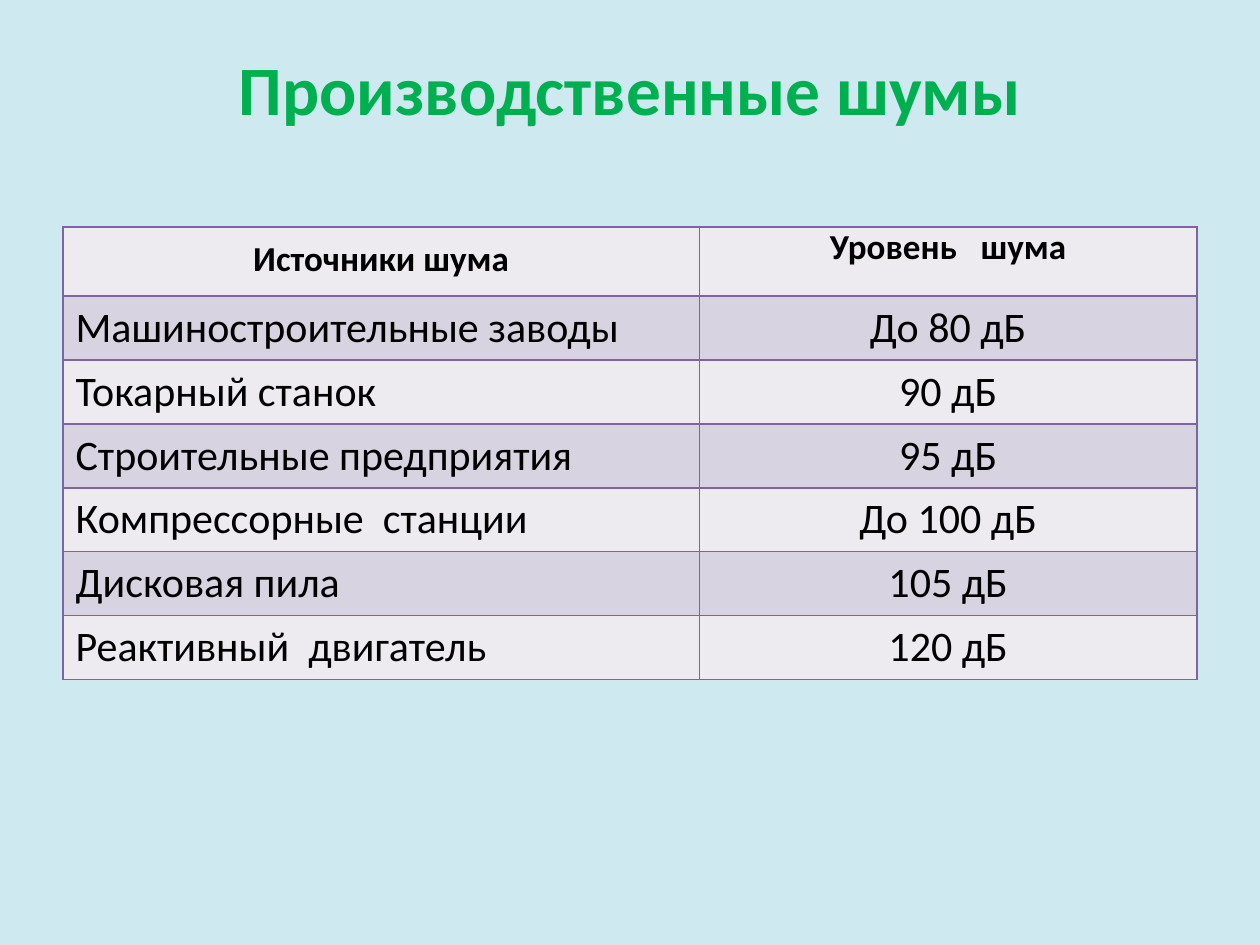
from lxml import etree
from pptx import Presentation
from pptx.dml.color import RGBColor
from pptx.enum import text
from pptx.oxml.ns import qn
from pptx.util import Inches, Pt

# Content
TITLE = "Производственные шумы"
HEADER = ("Источники шума", "Уровень   шума")
NOISE = [
    ("Машиностроительные заводы", "До 80 дБ"),
    ("Токарный станок", "90 дБ"),
    ("Строительные предприятия", "95 дБ"),
    ("Компрессорные  станции", "До 100 дБ"),
    ("Дисковая пила", "105 дБ"),
    ("Реактивный  двигатель", "120 дБ"),
]

THEME = {
    "font": "Calibri",
    "background": "CEE9EF",
    "title": "00B050",
    "text": "000000",
    "border": "8064A2",
    "bands": ("EDEAF0", "D8D3E0"),
    "title_size": 39.6,
    "header_size": 20,
    "body_size": 24,
}
COL_WIDTHS = (5.05, 3.95)
HEADER_HEIGHT, ROW_HEIGHT = 0.55, 0.5
HEADER_SPACING = (1.15, 0.8)
HEADER_INSET = 0.04


def style(p, size, color, bold, align):
    p.alignment = align
    p.font.name = THEME["font"]
    p.font.size = Pt(size)
    p.font.bold = bold
    p.font.color.rgb = RGBColor.from_string(color)


def add_borders(cell):
    """Put a 1 pt line on each side; lines must come before the fill."""
    tc_pr = cell._tc.get_or_add_tcPr()
    for i, side in enumerate(("lnL", "lnR", "lnT", "lnB")):
        ln = etree.Element(qn(f"a:{side}"), w=str(Pt(1)))
        fill = etree.SubElement(ln, qn("a:solidFill"))
        etree.SubElement(fill, qn("a:srgbClr"), val=THEME["border"])
        tc_pr.insert(i, ln)


def fill_cell(cell, value, row, col):
    is_header = row == 0
    cell.text = value
    cell.fill.solid()
    cell.fill.fore_color.rgb = RGBColor.from_string(THEME["bands"][row % 2])
    add_borders(cell)
    p = cell.text_frame.paragraphs[0]
    centred = is_header or col == 1
    style(p, THEME["header_size" if is_header else "body_size"], THEME["text"], is_header,
          text.PP_ALIGN.CENTER if centred else text.PP_ALIGN.LEFT)
    if is_header:
        p.line_spacing = HEADER_SPACING[col]
        p.space_after = Pt(10)
        cell.margin_left = cell.margin_right = Inches(HEADER_INSET)
        cell.margin_top = cell.margin_bottom = Inches(HEADER_INSET)


def main():
    prs = Presentation()
    prs.slide_width, prs.slide_height = Inches(10), Inches(7.5)
    slide = prs.slides.add_slide(prs.slide_layouts[5])
    slide.background.fill.solid()
    slide.background.fill.fore_color.rgb = RGBColor.from_string(THEME["background"])

    # Title
    title = slide.shapes.title
    title.left, title.top = Inches(0.5), Inches(0.3)
    title.width, title.height = Inches(9), Inches(0.79)
    tf = title.text_frame
    tf.text = TITLE
    tf.vertical_anchor = text.MSO_ANCHOR.MIDDLE
    style(tf.paragraphs[0], THEME["title_size"], THEME["title"], True, text.PP_ALIGN.CENTER)

    # Noise table
    rows = [HEADER, *NOISE]
    height = HEADER_HEIGHT + ROW_HEIGHT * len(NOISE)
    table = slide.shapes.add_table(len(rows), len(HEADER), Inches(0.5), Inches(1.8),
                                   Inches(sum(COL_WIDTHS)), Inches(height)).table
    for column, width in zip(table.columns, COL_WIDTHS):
        column.width = Inches(width)
    for r, values in enumerate(rows):
        table.rows[r].height = Inches(ROW_HEIGHT if r else HEADER_HEIGHT)
        for c, value in enumerate(values):
            fill_cell(table.cell(r, c), value, r, c)

    prs.save("out.pptx")


if __name__ == "__main__":
    main()
